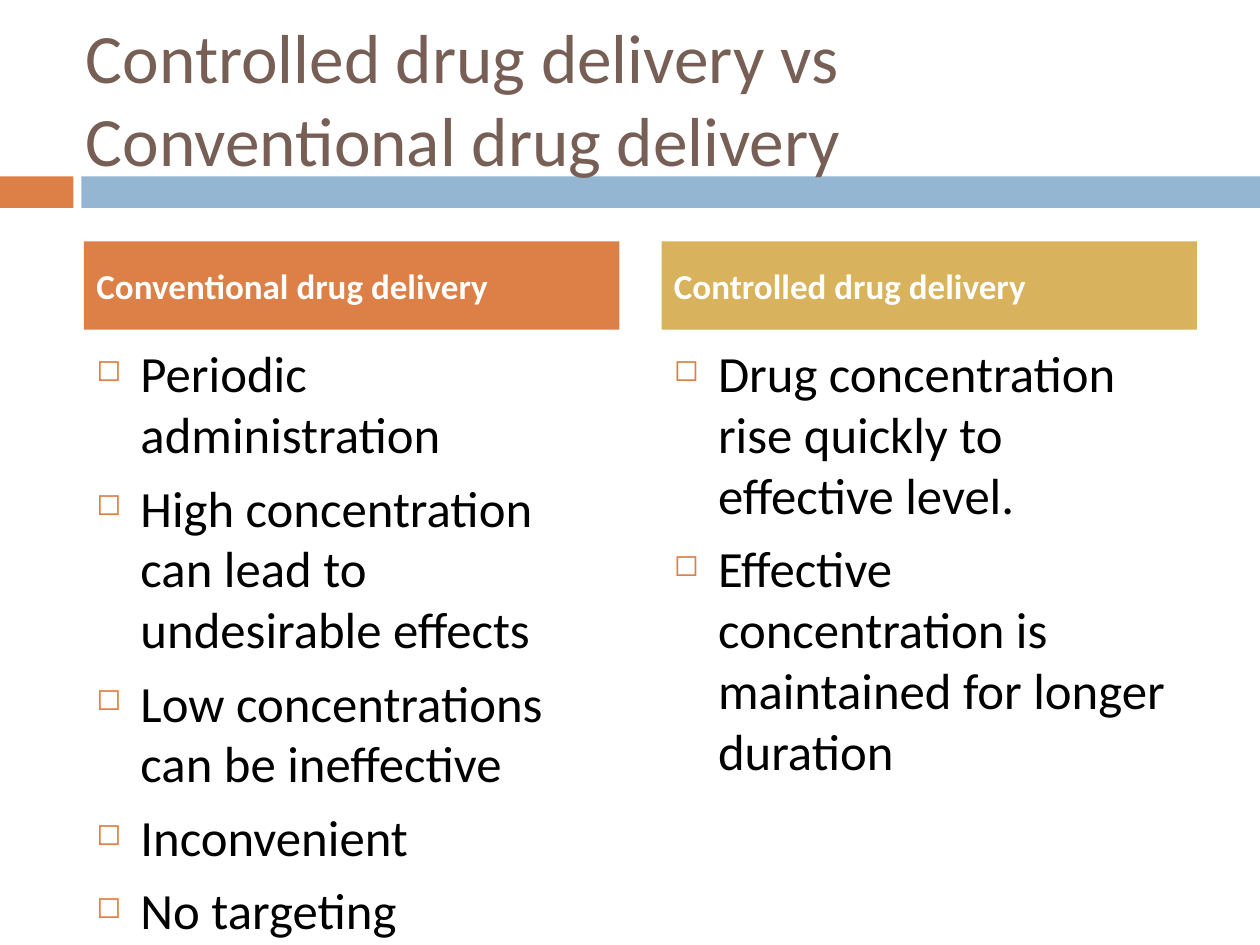
from dataclasses import dataclass

from lxml import etree
from pptx import Presentation
from pptx.dml.color import RGBColor
from pptx.enum.shapes import MSO_SHAPE
from pptx.enum.text import MSO_ANCHOR, PP_ALIGN
from pptx.oxml.ns import qn
from pptx.util import Pt

RECT = MSO_SHAPE.RECTANGLE
TOP, MIDDLE = MSO_ANCHOR.TOP, MSO_ANCHOR.MIDDLE
LEFT = PP_ALIGN.LEFT


@dataclass(frozen=True)
class Theme:
    font: str = "Calibri"
    orange: str = "DD8047"
    blue: str = "94B6D2"
    gold: str = "D8B25C"
    brown: str = "775F55"
    black: str = "000000"
    white: str = "FFFFFF"
    title_size: float = 39.6
    body_size: float = 29
    header_size: float = 20
    space_before: float = 7
    bullet_indent: float = 25.2


@dataclass(frozen=True)
class Box:
    left: float
    top: float
    width: float
    height: float

    def lengths(self) -> list:
        return [Pt(v) for v in (self.left, self.top, self.width, self.height)]


@dataclass(frozen=True)
class Column:
    header: str
    fill: str
    points: tuple[str, ...]
    body_height: float


THEME = Theme()

TITLE = "Controlled drug delivery vs Conventional drug delivery"
COLUMNS = (
    Column(
        "Conventional drug delivery",
        THEME.orange,
        (
            "Periodic administration",
            "High concentration can lead to undesirable effects",
            "Low concentrations can be ineffective",
            "Inconvenient",
            "No targeting",
        ),
        336,
    ),
    Column(
        "Controlled drug delivery",
        THEME.gold,
        (
            "Drug concentration rise quickly to effective level.",
            "Effective concentration is maintained for longer duration",
        ),
        282,
    ),
)
COLUMN_LEFT, COLUMN_WIDTH, COLUMN_GAP = 48, 306, 24
HEADER_TOP, HEADER_HEIGHT, BODY_TOP = 138, 50.4, 192


def add_bar(s, box: Box, fill: str):
    sp = s.shapes.add_shape(RECT, *box.lengths())
    sp.shadow.inherit = False
    sp.fill.solid()
    sp.fill.fore_color.rgb = RGBColor.from_string(fill)
    sp.line.fill.background()
    return sp


def set_text(sp, lines: tuple[str, ...], size: float, color: str,
             anchor, bold: bool = False, space_before: float = 0) -> None:
    tf = sp.text_frame
    tf.text = "\n".join(lines)
    tf.word_wrap = True
    tf.vertical_anchor = anchor
    for p in tf.paragraphs:
        p.alignment = LEFT
        p.space_before = Pt(space_before)
        for r in p.runs:
            r.font.name = THEME.font
            r.font.size = Pt(size)
            r.font.bold = bold
            r.font.color.rgb = RGBColor.from_string(color)


def add_bullet(p) -> None:
    pPr = p._p.get_or_add_pPr()
    indent = Pt(THEME.bullet_indent)
    pPr.set("marL", str(indent))
    pPr.set("indent", str(-indent))
    color = etree.SubElement(pPr, qn("a:buClr"))
    etree.SubElement(color, qn("a:srgbClr"), val=THEME.orange)
    etree.SubElement(pPr, qn("a:buSzPct"), val="60000")
    etree.SubElement(pPr, qn("a:buChar"), char="◻")


def add_column(s, column: Column, left: float) -> None:
    body = s.shapes.add_textbox(
        *Box(left, BODY_TOP, COLUMN_WIDTH, column.body_height).lengths())
    set_text(body, column.points, THEME.body_size, THEME.black, TOP,
             space_before=THEME.space_before)
    for p in body.text_frame.paragraphs:
        add_bullet(p)
    header = add_bar(
        s, Box(left, HEADER_TOP, COLUMN_WIDTH, HEADER_HEIGHT), column.fill)
    set_text(header, (column.header,), THEME.header_size, THEME.white, MIDDLE,
             bold=True, space_before=THEME.space_before)


def main() -> None:
    prs = Presentation()
    prs.slide_width, prs.slide_height = Pt(720), Pt(540)
    s = prs.slides.add_slide(prs.slide_layouts[6])

    add_bar(s, Box(0, 100.8, 42, 18), THEME.orange)
    add_bar(s, Box(46.5, 100.8, 673.5, 18), THEME.blue)

    title = s.shapes.add_textbox(*Box(42, 21.6, 642, 68.4).lengths())
    set_text(title, (TITLE,), THEME.title_size, THEME.brown, MIDDLE)

    for i, column in enumerate(COLUMNS):
        add_column(s, column, COLUMN_LEFT + i * (COLUMN_WIDTH + COLUMN_GAP))

    prs.save("out.pptx")


if __name__ == "__main__":
    main()
